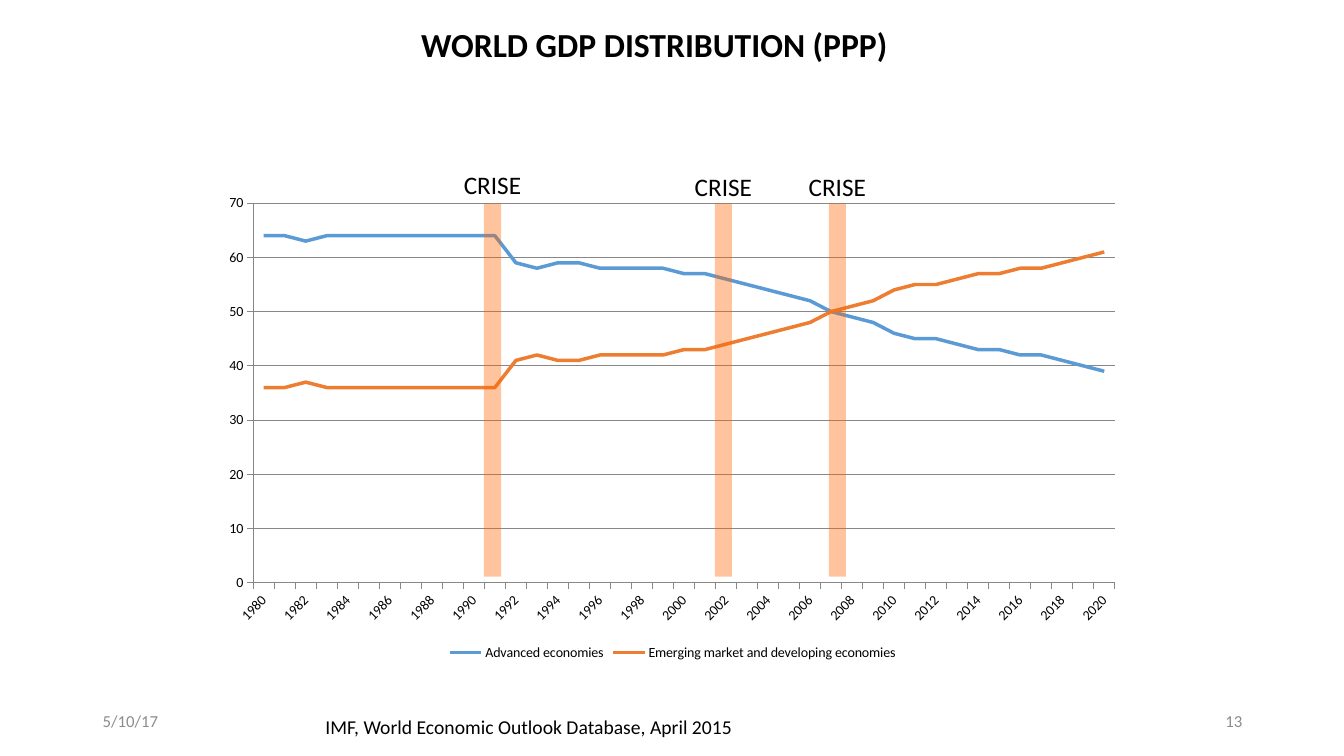
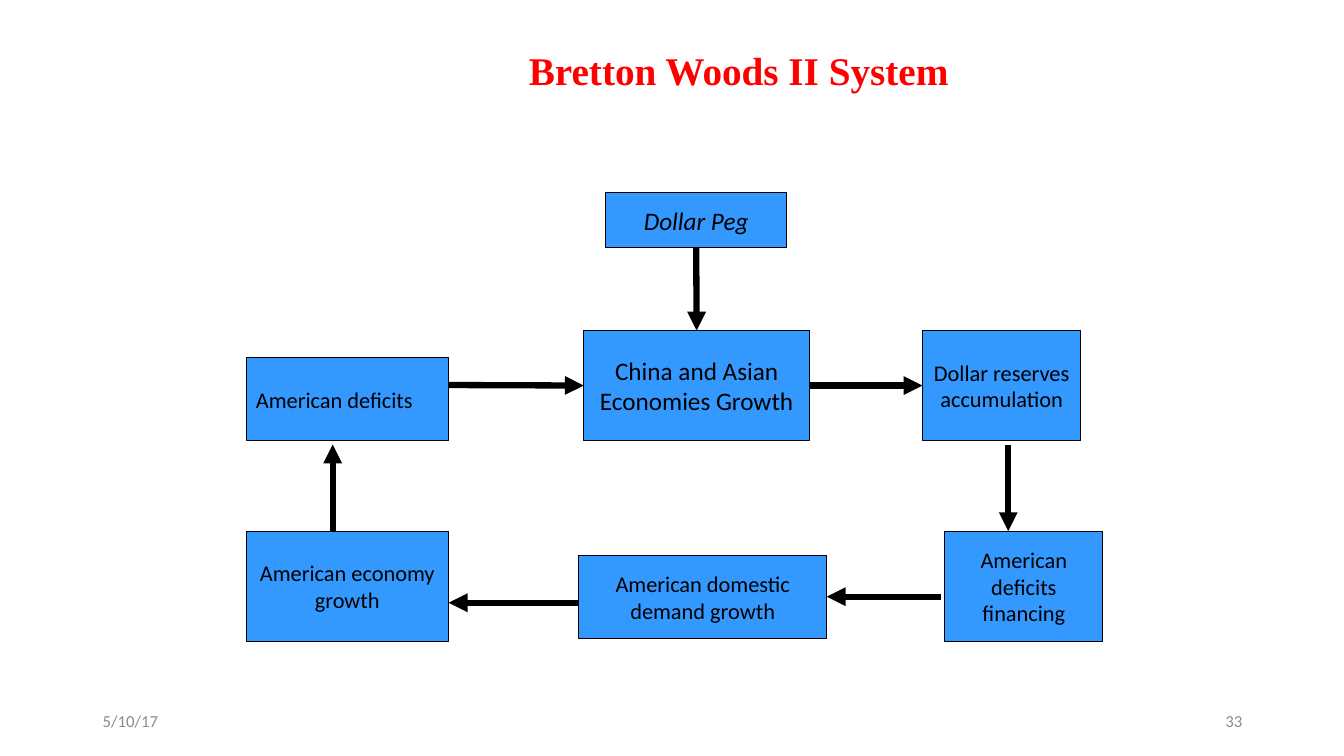
from lxml import etree
from pptx import Presentation
from pptx import util as u
from pptx.chart.data import CategoryChartData
from pptx.dml.color import RGBColor
from pptx.enum import chart as ch, shapes, text
from pptx.oxml import parse_xml
from pptx.oxml.ns import nsdecls, qn

Inches, Pt = u.Inches, u.Pt
BLACK = RGBColor(0x00, 0x00, 0x00)
RED = RGBColor(0xFF, 0x00, 0x00)
FOOTER_GREY = RGBColor(0x8C, 0x8C, 0x8C)
GRID_GREY = RGBColor(0x87, 0x87, 0x87)
NODE_BLUE = RGBColor(0x33, 0x99, 0xFF)
CRISIS_ORANGE = RGBColor(0xFF, 0x66, 0x00)
ADVANCED_BLUE = RGBColor(0x5B, 0x9B, 0xD5)
EMERGING_ORANGE = RGBColor(0xED, 0x7D, 0x31)
BODY_FONT, TITLE_SERIF = "Calibri", "Times New Roman"
LEFT, CENTER, RIGHT = (text.PP_ALIGN.LEFT, text.PP_ALIGN.CENTER,
                       text.PP_ALIGN.RIGHT)
MIDDLE, TOP = text.MSO_ANCHOR.MIDDLE, text.MSO_ANCHOR.TOP

ADVANCED = [64, 64, 63, 64, 64, 64, 64, 64, 64, 64, 64, 64, 59, 58,
            59, 59, 58, 58, 58, 58, 57, 57, 56, 55, 54, 53, 52, 50,
            49, 48, 46, 45, 45, 44, 43, 43, 42, 42, 41, 40, 39]
EMERGING = [100 - share for share in ADVANCED]
# Rounding makes these years add up to 99 or 101
EMERGING[1980 - 1980:1] = [36]
for year, share in {1995: 41, 2011: 55, 2010: 54}.items():
    EMERGING[year - 1980] = share


def place(shape, box):
    shape.left, shape.top, shape.width, shape.height = map(Inches, box)


def write(shape, words, size, color=BLACK, align=LEFT, anchor=TOP,
          font=BODY_FONT, bold=False, italic=False, wrap=True):
    frame = shape.text_frame
    frame.text = words
    frame.word_wrap = wrap
    frame.auto_size = text.MSO_AUTO_SIZE.NONE
    frame.vertical_anchor = anchor
    line = frame.paragraphs[0]
    line.alignment = align
    line.font.name, line.font.size = font, Pt(size)
    line.font.bold, line.font.italic = bold, italic
    line.font.color.rgb = color


def add_text(slide, box, words, size, **style):
    write(slide.shapes.add_textbox(*map(Inches, box)), words, size, **style)


def add_box(slide, box, fill):
    rect = slide.shapes.add_shape(shapes.MSO_SHAPE.RECTANGLE,
                                  *map(Inches, box))
    rect.shadow.inherit = False
    rect.fill.solid()
    rect.fill.fore_color.rgb = fill
    return rect


def new_slide(prs, title, title_box, number, **title_style):
    """Title-only slide with its date and page number."""
    slide = prs.slides.add_slide(prs.slide_layouts[5])
    place(slide.shapes.title, title_box)
    write(slide.shapes.title, title, align=CENTER, bold=True, **title_style)
    for left, words, align in ((0.92, "5/10/17", LEFT),
                               (9.42, number, RIGHT)):
        add_text(slide, (left, 6.95, 3, 0.4), words, 12, color=FOOTER_GREY,
                 align=align, anchor=MIDDLE)
    return slide


def fix_plot_area(chart, x, y, w, h):
    """Pin the inner plot area, in fractions of the chart."""
    plot_area = chart._chartSpace.chart.plotArea
    for old in plot_area.findall(qn("c:layout")):
        plot_area.remove(old)
    plot_area.insert(0, parse_xml(
        f'<c:layout {nsdecls("c")}><c:manualLayout>'
        '<c:layoutTarget val="inner"/><c:xMode val="edge"/>'
        f'<c:yMode val="edge"/><c:x val="{x}"/><c:y val="{y}"/>'
        f'<c:w val="{w}"/><c:h val="{h}"/></c:manualLayout></c:layout>'))


def add_gdp_chart(slide, box):
    data = CategoryChartData()
    data.categories = [str(year) for year in range(1980, 2021)]
    data.add_series("Advanced economies", ADVANCED)
    data.add_series("Emerging market and developing economies", EMERGING)
    chart = slide.shapes.add_chart(ch.XL_CHART_TYPE.LINE,
                                   *map(Inches, box), data).chart
    chart.has_title = False
    chart.font.name, chart.font.size = BODY_FONT, Pt(10)
    chart.font.color.rgb = BLACK
    chart.has_legend = True
    chart.legend.position = ch.XL_LEGEND_POSITION.BOTTOM
    chart.legend.include_in_layout = False
    chart.plots[0].vary_by_categories = False
    for series, color in zip(chart.series, (ADVANCED_BLUE, EMERGING_ORANGE)):
        series.smooth = False
        series.marker.style = ch.XL_MARKER_STYLE.NONE
        series.format.line.width = Pt(2.5)
        series.format.line.color.rgb = color

    years, shares = chart.category_axis, chart.value_axis
    shares.minimum_scale, shares.maximum_scale = 0, 70
    shares.major_unit = 10
    shares.has_major_gridlines = True
    for line in (years.format.line, shares.format.line,
                 shares.major_gridlines.format.line):
        line.width = Pt(0.75)
        line.color.rgb = GRID_GREY
    for axis in (years, shares):
        axis.major_tick_mark = ch.XL_TICK_MARK.OUTSIDE
        axis.minor_tick_mark = ch.XL_TICK_MARK.NONE
        axis.tick_labels.font.size = Pt(10)
    # Slanted labels, every second year
    years._element.find(qn("c:txPr")).find(qn("a:bodyPr")).set(
        "rot", "-2700000")
    skip = parse_xml(f'<c:tickLblSkip {nsdecls("c")} val="2"/>')
    years._element.find(qn("c:noMultiLvlLbl")).addprevious(skip)
    fix_plot_area(chart, 0.045, 0.037, 0.935, 0.793)


def add_crisis(slide, left, top, label_rise):
    """Translucent band with its label above."""
    band_width, label_width = 0.17, 0.78
    band = add_box(slide, (left, top, band_width, 3.7), CRISIS_ORANGE)
    band.line.fill.background()
    color = band.fill._xPr.find(qn("a:solidFill"))[0]
    etree.SubElement(color, qn("a:alpha")).set("val", "38000")
    label_left = left + (band_width - label_width) / 2
    add_text(slide, (label_left, top - label_rise, label_width, 0.4),
             "CRISE", 18, align=CENTER, wrap=False)


def gdp_slide(prs):
    slide = new_slide(prs, "WORLD GDP DISTRIBUTION (PPP)",
                      (4.02, 0.19, 4.94, 0.54), "13", size=24)
    left, top = 2.1, 1.84
    add_gdp_chart(slide, (left, top, 9.14, 4.75))
    for offset, rise in ((2.7, 0.39), (4.99, 0.37), (6.12, 0.37)):
        add_crisis(slide, left + offset, top + 0.18, rise)
    add_text(slide, (3.13, 7.04, 4.3, 0.34),
             "IMF, World Economic Outlook Database, April 2015", 14,
             wrap=False)


def add_node(slide, box, words, size, align=CENTER, italic=False):
    node = add_box(slide, box, NODE_BLUE)
    node.line.color.rgb = BLACK
    node.line.width = Pt(0.75)
    write(node, words, size, align=align, anchor=MIDDLE, italic=italic)
    return node


def add_arrow(slide, start, end, begin=None, finish=None):
    """Arrow from start to end; begin and finish are (node, side) joins."""
    arrow = slide.shapes.add_connector(shapes.MSO_CONNECTOR.STRAIGHT,
                                       *map(Inches, start + end))
    if begin:
        arrow.begin_connect(*begin)
    if finish:
        arrow.end_connect(*finish)
    arrow.line.color.rgb = BLACK
    arrow.line.width = Pt(4.5)
    etree.SubElement(arrow.line._get_or_add_ln(),
                     qn("a:tailEnd")).set("type", "triangle")
    etree.SubElement(arrow._element.spPr, qn("a:effectLst"))


def add_cycle(slide, left, top):
    """Cycle of boxes and arrows, measured from its top left corner."""
    def at(x, y):
        return left + x, top + y

    def node(x, y, w, h, words, size=16, **style):
        return add_node(slide, at(x, y) + (w, h), words, size, **style)

    def arrow(start, end, **joins):
        add_arrow(slide, at(*start), at(*end), **joins)

    peg = node(3.57, 0, 1.79, 0.55, "Dollar Peg", 18, italic=True)
    node(0, 1.64, 2.01, 0.82, "American deficits", align=LEFT)
    asia = node(3.35, 1.37, 2.24, 1.09, "China and Asian Economies Growth", 18)
    reserves = node(6.71, 1.37, 1.57, 1.09, "Dollar reserves accumulation")
    node(6.93, 3.36, 1.57, 1.09, "American deficits financing")
    demand = node(3.3, 3.6, 2.46, 0.82, "American domestic demand growth")
    node(0, 3.36, 2.01, 1.09, "American economy growth")

    arrow((4.47, 0.55), (4.47, 1.37), begin=(peg, 2), finish=(asia, 0))
    arrow((5.59, 1.91), (6.71, 1.91), begin=(asia, 3), finish=(reserves, 1))
    arrow((2.01, 1.91), (3.35, 1.91), finish=(asia, 1))
    arrow((7.56, 2.5), (7.56, 3.36))
    arrow((6.89, 4.01), (5.76, 4.01), finish=(demand, 3))
    arrow((3.3, 4.07), (2.01, 4.07))
    arrow((0.86, 3.36), (0.86, 2.5))


def bretton_woods_slide(prs):
    slide = new_slide(prs, "Bretton Woods II System",
                      (3.94, 0.41, 6.77, 0.57), "33", size=28, color=RED,
                      font=TITLE_SERIF)
    add_cycle(slide, 2.44, 1.91)


def main():
    prs = Presentation()
    prs.slide_width, prs.slide_height = Inches(13.33), Inches(7.5)
    gdp_slide(prs)
    bretton_woods_slide(prs)
    prs.save("out.pptx")


if __name__ == "__main__":
    main()
